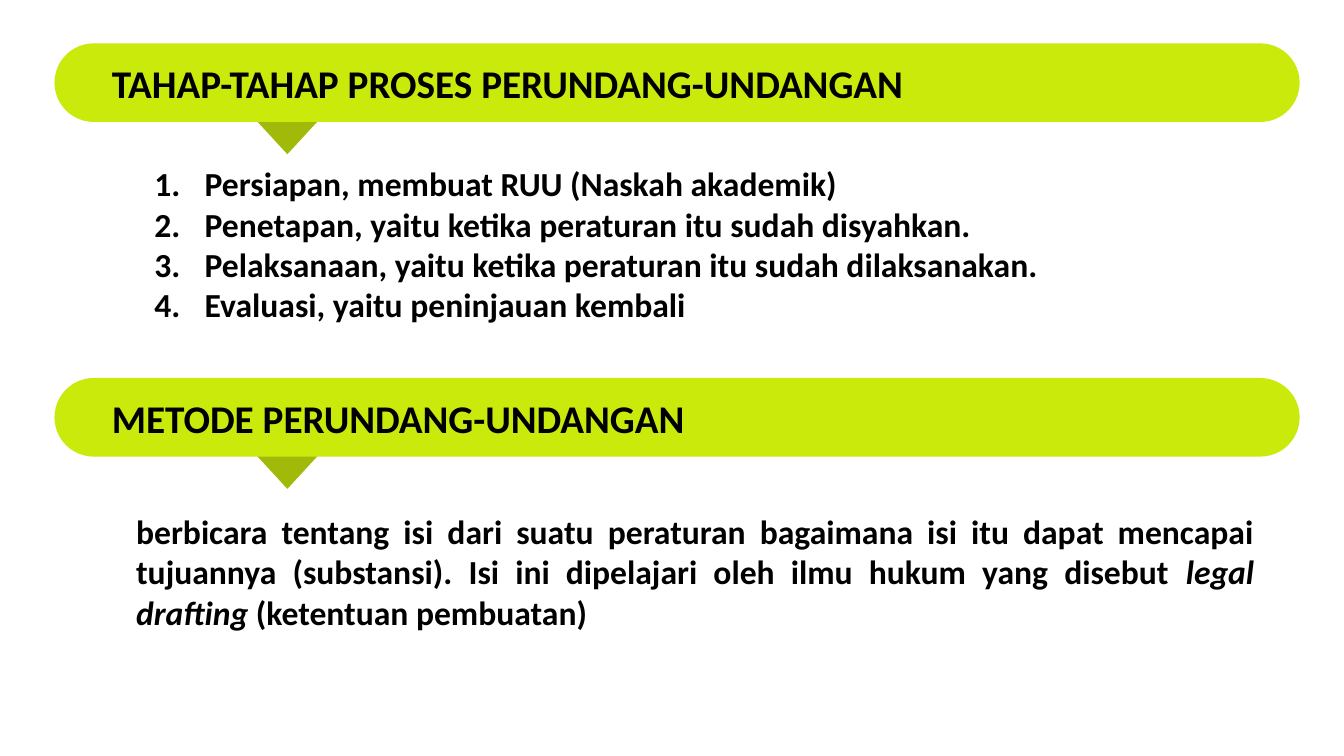
from lxml import etree
from pptx import Presentation
from pptx.dml.color import RGBColor
from pptx.enum.shapes import MSO_SHAPE
from pptx.enum.text import MSO_ANCHOR, MSO_AUTO_SIZE, PP_ALIGN
from pptx.oxml.ns import qn
from pptx.util import Inches, Pt

ROUND, TRIANGLE = MSO_SHAPE.ROUNDED_RECTANGLE, MSO_SHAPE.ISOSCELES_TRIANGLE
TOP, NO_FIT = MSO_ANCHOR.TOP, MSO_AUTO_SIZE.NONE
LEFT, JUSTIFY = PP_ALIGN.LEFT, PP_ALIGN.JUSTIFY

STEPS = [
    [("Persiapan, membuat RUU (Naskah akademik)", False)],
    [("Penetapan, yaitu ketika peraturan itu sudah disyahkan.", False)],
    [("Pelaksanaan, yaitu ketika peraturan itu sudah dilaksanakan.", False)],
    [("Evaluasi, yaitu peninjauan kembali", False)],
]
METHOD = [[
    ("berbicara tentang isi dari suatu peraturan bagaimana isi itu dapat mencapai "
     "tujuannya (substansi). Isi ini dipelajari oleh ilmu hukum yang disebut ", False),
    ("legal drafting", True),
    (" (ketentuan pembuatan)", False),
]]


def add_block(s, kind, box, color):
    sp = s.shapes.add_shape(kind, *map(Inches, box))
    sp.shadow.inherit = False
    sp.fill.solid()
    sp.fill.fore_color.rgb = RGBColor.from_string(color)
    sp.line.fill.background()
    return sp


def fill_text(s, sp, box, paragraphs, size, align, numbered=False):
    s.shapes.element.append(sp.element)
    sp.left, sp.top, sp.width, sp.height = map(Inches, box)
    tf = sp.text_frame
    tf.word_wrap = True
    tf.auto_size = NO_FIT
    tf.vertical_anchor = TOP
    for i, runs in enumerate(paragraphs):
        p = tf.add_paragraph() if i else tf.paragraphs[0]
        p.alignment = align
        p.space_before = Pt(0)
        p.font.name = "Calibri"
        p.font.size = Pt(size)
        p.font.bold = True
        p.font.color.rgb = RGBColor.from_string("000000")
        pPr = p._p.get_or_add_pPr()
        indent = Inches(0.5) if numbered else 0
        pPr.set("marL", str(indent))
        pPr.set("indent", str(-indent))
        bullet = etree.Element(qn("a:buAutoNum" if numbered else "a:buNone"))
        if numbered:
            bullet.set("type", "arabicPeriod")
        pPr.find(qn("a:defRPr")).addprevious(bullet)
        for text, italic in runs:
            r = p.add_run()
            r.text = text
            if italic:
                r.font.italic = True


prs = Presentation()
prs.slide_width, prs.slide_height = Inches(13.33), Inches(7.5)
s = prs.slides.add_slide(prs.slide_layouts.get_by_name("Comparison"))
title, spare, steps, subtitle, method = s.placeholders
spare.element.getparent().remove(spare.element)

sections = [
    (0.43, title, "TAHAP-TAHAP PROSES PERUNDANG-UNDANGAN",
     steps, (1.43, 1.57, 10.94, 1.75), STEPS, True),
    (3.75, subtitle, "METODE PERUNDANG-UNDANGAN",
     method, (1.25, 5.02, 11.29, 1.35), METHOD, False),
]
for top, heading, name, body, box, paragraphs, numbered in sections:
    pointer = add_block(s, TRIANGLE, (2.27, top + 0.47, 1.16, 0.63), "A1BA0A")
    pointer.rotation = 180
    bar = add_block(s, ROUND, (0.54, top, 12.35, 0.78), "CAEA0C")
    bar.adjustments[0] = 0.5
    fill_text(s, heading, (1.01, top + 0.11, 8.34, 0.57), [[(name, False)]], 28, LEFT)
    fill_text(s, body, box, paragraphs, 24, JUSTIFY, numbered)

prs.save("out.pptx")
